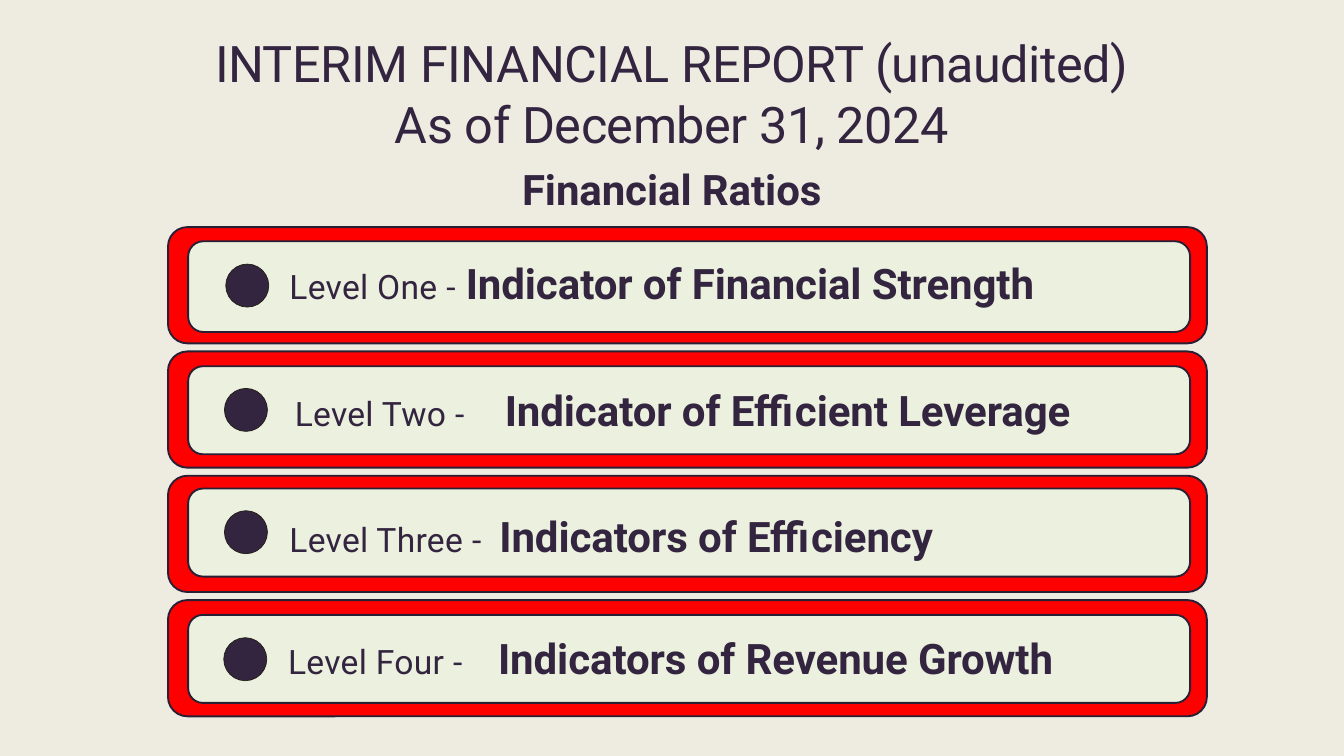
from pptx import Presentation
from pptx.dml.color import RGBColor
from pptx.enum.shapes import MSO_SHAPE as SHAPE
from pptx.enum.text import PP_ALIGN as ALIGN
from pptx.util import Inches, Pt

COLORS = {"bg": "EEECE1", "frame": "FF0000", "panel": "EBF1DE",
          "edge": "291F35", "ink": "332440", "dot_edge": "1E1C11"}
FONT = "Roboto"

# Run formats; spacing is in hundredths of a point
HEADING = ({"size": Pt(54)}, -50)
LEVEL = ({"size": Pt(36)}, 30)
DASH = ({"size": Pt(36)}, 0)
STRONG = ({"size": Pt(45), "bold": True}, -10)

# Level, indicator, then offsets from the row's corner:
# panel top, panel height, dot left, dot top, text left, text top
ROWS = [
    ("Level One ", "Indicator of Financial Strength",
     0.21, 1.35, 0.86, 0.55, 1.71, 0.41),
    ("Level Two ", "Indicator of Efficient Leverage",
     0.22, 1.31, 0.84, 0.55, 1.79, 0.44),
    ("Level Three ", "Indicators of Efficiency",
     0.19, 1.31, 0.84, 0.52, 1.71, 0.47),
    ("Level Four ", "Indicators of Revenue Growth",
     0.22, 1.31, 0.83, 0.56, 1.69, 0.43),
]
ROW_LEFT, ROW_TOP, ROW_WIDTH, ROW_HEIGHT, ROW_PITCH = 2.5, 3.38, 15.46, 1.73, 1.85


def color(name):
    return RGBColor.from_string(COLORS[name])


def add_shape(slide, kind, box, fill, edge, weight):
    sp = slide.shapes.add_shape(kind, *map(Inches, box))
    sp.shadow.inherit = False
    sp.fill.solid()
    sp.fill.fore_color.rgb = color(fill)
    sp.line.color.rgb = color(edge)
    sp.line.width = Pt(weight)


def add_text(slide, box):
    tf = slide.shapes.add_textbox(*map(Inches, box)).text_frame
    tf.word_wrap = True
    return tf


def add_run(p, text, style):
    fmt, spacing = style
    r = p.add_run()
    r.text = text
    for key, value in {"name": FONT, **fmt}.items():
        setattr(r.font, key, value)
    r.font.color.rgb = color("ink")
    r._r.get_or_add_rPr().set("spc", str(spacing))


def add_title(slide, box):
    tf = add_text(slide, box)
    tf.margin_left = tf.margin_right = tf.margin_bottom = 0
    tf.margin_top = Inches(0.07)
    lines = [("INTERIM FINANCIAL REPORT (unaudited)", HEADING, 0),
             ("As of December 31, 2024", HEADING, 0),
             ("Financial Ratios", STRONG, 11)]
    for i, (text, style, gap) in enumerate(lines):
        p = tf.add_paragraph() if i else tf.paragraphs[0]
        p.alignment = ALIGN.CENTER
        p.space_before = Pt(gap)
        add_run(p, text, style)


def add_level_row(slide, box, row):
    x, y, w, h = box
    level, indicator, panel_y, panel_h, dot_x, dot_y, text_x, text_y = row
    # Frame, panel and bullet dot
    add_shape(slide, SHAPE.ROUNDED_RECTANGLE, box, "frame", "edge", 2)
    add_shape(slide, SHAPE.ROUNDED_RECTANGLE,
              (x + 0.3, y + panel_y, w - 0.55, panel_h), "panel", "edge", 2)
    add_shape(slide, SHAPE.OVAL, (x + dot_x, y + dot_y, 0.64, 0.64),
              "ink", "dot_edge", 0.75)
    # Level and indicator
    tf = add_text(slide, (x + text_x, y + text_y, 13.3, 0.86))
    p = tf.paragraphs[0]
    p.space_before = Pt(5.8)
    add_run(p, level, LEVEL)
    add_run(p, "-\t ", DASH)
    add_run(p, indicator, STRONG)


def main():
    prs = Presentation()
    prs.slide_width, prs.slide_height = Inches(20), Inches(11.25)
    slide = prs.slides.add_slide(prs.slide_layouts[6])
    slide.background.fill.solid()
    slide.background.fill.fore_color.rgb = color("bg")

    add_title(slide, (2.5, 0.41, 14.99, 2.74))
    for i, row in enumerate(ROWS):
        top = ROW_TOP + i * ROW_PITCH
        add_level_row(slide, (ROW_LEFT, top, ROW_WIDTH, ROW_HEIGHT), row)
    prs.save("out.pptx")


if __name__ == "__main__":
    main()
